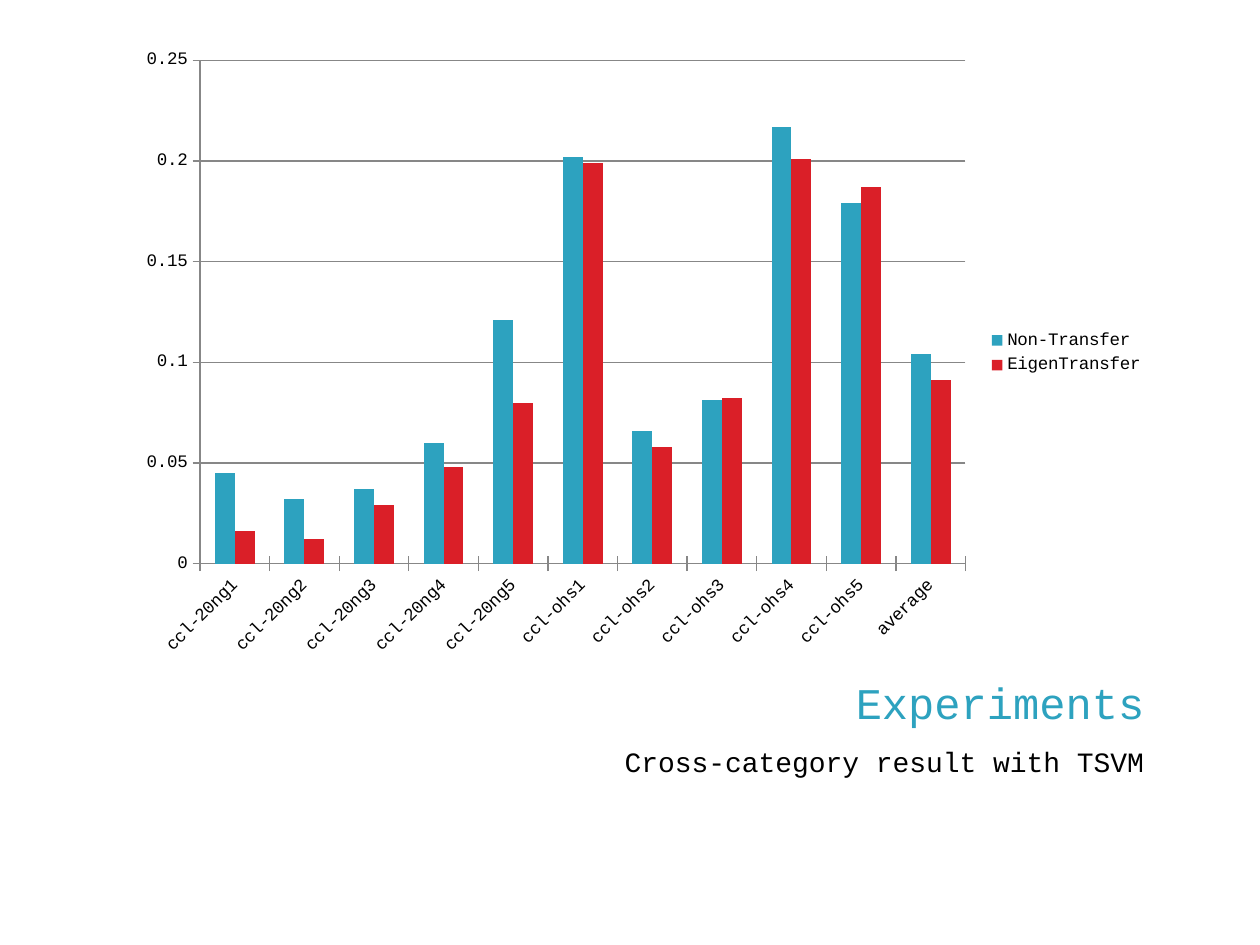
from pptx import Presentation
from pptx.chart.data import CategoryChartData
from pptx.dml.color import RGBColor
from pptx.enum import chart as charts, text
from pptx.util import Inches, Pt

FONT = "Courier New"
COLORS = {"teal": "2DA2BF", "red": "DA1F28", "text": "000000", "line": "878787"}
CATEGORIES = [f"ccl-{source}{number}" for source in ("20ng", "ohs")
              for number in range(1, 6)] + ["average"]
SERIES = {
    "Non-Transfer": ("teal", [0.045, 0.032, 0.037, 0.06, 0.121, 0.202,
                              0.066, 0.081, 0.217, 0.179, 0.104]),
    "EigenTransfer": ("red", [0.016, 0.012, 0.029, 0.048, 0.08, 0.199,
                              0.058, 0.082, 0.201, 0.187, 0.091]),
}


def color(name):
    return RGBColor.from_string(COLORS[name])


def style_font(font, size, color_name):
    font.name = FONT
    font.size = Pt(size)
    font.color.rgb = color(color_name)


def fill_heading(shape, box, wording, size, color_name, anchor):
    """Place a right-aligned line of text in the given box."""
    shape.left, shape.top, shape.width, shape.height = map(Inches, box)
    frame = shape.text_frame
    frame.word_wrap = True
    frame.auto_size = text.MSO_AUTO_SIZE.NONE
    frame.vertical_anchor = anchor
    paragraph = frame.paragraphs[0]
    paragraph.text = wording
    paragraph.alignment = text.PP_ALIGN.RIGHT
    style_font(paragraph.font, size, color_name)


def add_result_chart(slide, box):
    data = CategoryChartData()
    data.categories = CATEGORIES
    for name, (_, values) in SERIES.items():
        data.add_series(name, values)
    chart = slide.shapes.add_chart(
        charts.XL_CHART_TYPE.COLUMN_CLUSTERED, *map(Inches, box), data).chart
    chart.has_title = False
    style_font(chart.font, 10, "text")

    chart.has_legend = True
    chart.legend.position = charts.XL_LEGEND_POSITION.RIGHT
    chart.legend.include_in_layout = False

    plot = chart.plots[0]
    plot.gap_width = 150
    plot.overlap = 0
    plot.vary_by_categories = False
    for series, (color_name, _) in zip(plot.series, SERIES.values()):
        series.format.fill.solid()
        series.format.fill.fore_color.rgb = color(color_name)

    value_axis, category_axis = chart.value_axis, chart.category_axis
    value_axis.minimum_scale, value_axis.maximum_scale = 0, 0.25
    value_axis.major_unit = 0.05
    value_axis.has_major_gridlines = True
    for axis in (value_axis, category_axis):
        axis.major_tick_mark = charts.XL_TICK_MARK.CROSS
        style_font(axis.tick_labels.font, 10, "text")
    for part in (value_axis, category_axis, value_axis.major_gridlines):
        part.format.line.color.rgb = color("line")
        part.format.line.width = Pt(0.75)
    # Slant the category labels by 45 degrees
    category_axis.tick_labels.font
    category_axis._element.txPr.bodyPr.set("rot", "-2700000")


def main():
    presentation = Presentation()
    presentation.slide_width, presentation.slide_height = Inches(10), Inches(7.5)
    slide = presentation.slides.add_slide(presentation.slide_layouts[5])
    fill_heading(slide.shapes.title, (1, 5.33, 8.18, 0.5), "Experiments",
                 25, "teal", text.MSO_ANCHOR.BOTTOM)
    subtitle_box = (4.83, 5.86, 4.35, 1)
    subtitle = slide.shapes.add_textbox(*map(Inches, subtitle_box))
    fill_heading(subtitle, subtitle_box, "Cross-category result with TSVM",
                 16, "text", text.MSO_ANCHOR.TOP)
    add_result_chart(slide, (1, 0.3, 8.18, 5))
    presentation.save("out.pptx")


if __name__ == "__main__":
    main()
